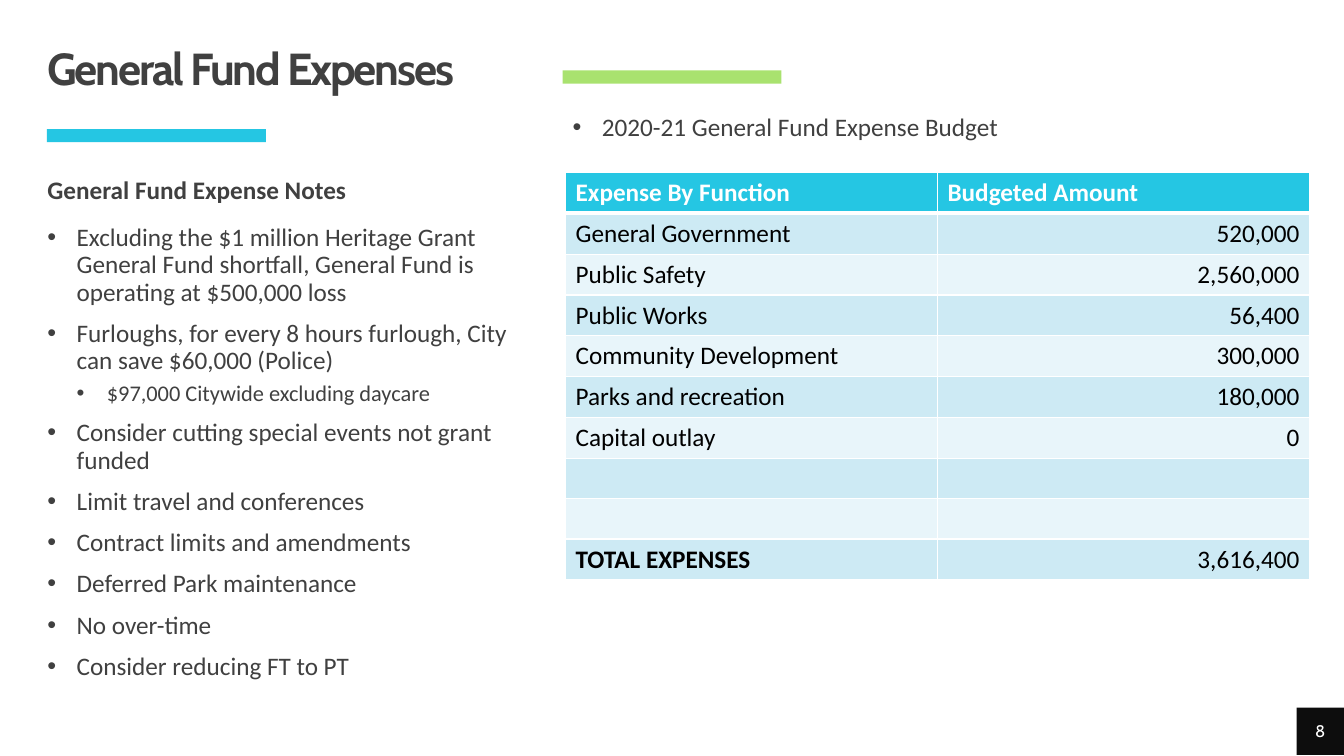
from pptx import Presentation
from pptx.dml.color import RGBColor
from pptx.enum.shapes import MSO_SHAPE
from pptx.enum.text import MSO_ANCHOR, MSO_AUTO_SIZE, PP_ALIGN
from pptx.oxml.ns import qn
from pptx.util import Inches, Pt
from lxml import etree

RECT = MSO_SHAPE.RECTANGLE
TOP, MIDDLE = MSO_ANCHOR.TOP, MSO_ANCHOR.MIDDLE
LEFT, CENTER, RIGHT = PP_ALIGN.LEFT, PP_ALIGN.CENTER, PP_ALIGN.RIGHT
NO_FIT = MSO_AUTO_SIZE.NONE

WIDTH, HEIGHT = Inches(13.33), Inches(7.5)
HEADING_FONT, BODY_FONT = "Cabin", "Calibri"
CYAN = RGBColor(0x25, 0xC6, 0xE3)
GREEN = RGBColor(0xA9, 0xE2, 0x6F)
GRAY = RGBColor(0x40, 0x40, 0x40)
NEAR_BLACK = RGBColor(0x0D, 0x0D, 0x0D)
BLACK = RGBColor(0, 0, 0)
WHITE = RGBColor(0xFF, 0xFF, 0xFF)
BAND_DARK = RGBColor(0xCD, 0xEA, 0xF4)
BAND_LIGHT = RGBColor(0xE8, 0xF5, 0xFA)

# Columns and rows, in percent of the slide's width and height
MARGIN_X, TEXT_X, RIGHT_X, TABLE_X = 3.5, 2.78, 41.86, 42.08
CONTENT_Y = 22.8
LINE_W, LINE_H = 44.86, 5.2
BAR_W, BAR_H = 16.28, 1.73

# List level: left margin, hanging indent, space before, size
LEVELS = [(0.29, -0.29, 10, 18), (0.59, -0.3, 5, 16)]

NOTES = [
    ("Excluding the $1 million Heritage Grant General Fund shortfall, "
     "General Fund is operating at $500,000 loss", 0),
    ("Furloughs, for every 8 hours furlough, City can save $60,000 (Police)", 0),
    ("$97,000 Citywide excluding daycare", 1),
    ("Consider cutting special events not grant funded", 0),
    ("Limit travel and conferences", 0),
    ("Contract limits and amendments", 0),
    ("Deferred Park maintenance", 0),
    ("No over-time", 0),
    ("Consider reducing FT to PT", 0),
]
EXPENSES = [
    ("Expense By Function", "Budgeted Amount"),
    ("General Government", "520,000"),
    ("Public Safety", "2,560,000"),
    ("Public Works", "56,400"),
    ("Community Development", "300,000"),
    ("Parks and recreation", "180,000"),
    ("Capital outlay", "0"),
    ("", ""),
    ("", ""),
    ("TOTAL EXPENSES", "3,616,400"),
]


def area(x, y, w, h):
    """Turn percentages of the slide into left, top, width and height."""
    return (int(WIDTH * x / 100), int(HEIGHT * y / 100),
            int(WIDTH * w / 100), int(HEIGHT * h / 100))


def write(p, text, size=18, color=GRAY, font=BODY_FONT, bold=False,
          align=LEFT, spacing=None):
    p.alignment = align
    r = p.add_run()
    r.text = text
    r.font.size, r.font.name, r.font.bold = Pt(size), font, bold
    r.font.color.rgb = color
    if spacing is not None:
        r.font._element.set("spc", str(int(spacing * 100)))


def place(sp, box, anchor=TOP, inset=None):
    sp.left, sp.top, sp.width, sp.height = area(*box)
    tf = sp.text_frame
    tf.word_wrap, tf.auto_size, tf.vertical_anchor = True, NO_FIT, anchor
    if inset is not None:
        tf.margin_left = tf.margin_right = Inches(inset)
        tf.margin_top = tf.margin_bottom = Inches(inset)
    return tf


def format_paragraph(p, level=0, bullet=True):
    margin, indent, before, size = LEVELS[level]
    p.level = level
    p.line_spacing, p.space_before, p.space_after = 0.9, Pt(before), Pt(0)
    pPr = p._p.get_or_add_pPr()
    pPr.set("marL", str(Inches(margin) if bullet else 0))
    pPr.set("indent", str(Inches(indent) if bullet else 0))
    if bullet:
        etree.SubElement(pPr, qn("a:buFont"), typeface="Arial")
        etree.SubElement(pPr, qn("a:buChar"), char="•")
    else:
        etree.SubElement(pPr, qn("a:buNone"))
    return size


def fill_list(sp, box, items, bullet=True, bold=False):
    tf = place(sp, box)
    for i, (text, level) in enumerate(items):
        p = tf.add_paragraph() if i else tf.paragraphs[0]
        size = format_paragraph(p, level, bullet)
        write(p, text, size=size, bold=bold)


def add_block(s, box, color):
    sp = s.shapes.add_shape(RECT, *area(*box))
    sp.shadow.inherit = False
    sp.fill.solid()
    sp.fill.fore_color.rgb = color
    sp.line.fill.background()
    return sp


def add_borders(cell, bottom):
    tcPr = cell._tc.get_or_add_tcPr()
    for i, side in enumerate(("lnL", "lnR", "lnT", "lnB")):
        width = Pt(bottom if side == "lnB" else 1)
        ln = etree.Element(qn("a:" + side), w=str(width))
        fill = etree.SubElement(ln, qn("a:solidFill"))
        etree.SubElement(fill, qn("a:srgbClr"), val=str(WHITE))
        tcPr.insert(i, ln)


def add_expense_table(s, box, rows):
    table = s.shapes.add_table(len(rows), 2, *area(*box)).table
    for i, row in enumerate(rows):
        header = i == 0
        band = CYAN if header else BAND_DARK if i % 2 else BAND_LIGHT
        for j, text in enumerate(row):
            cell = table.cell(i, j)
            cell.fill.solid()
            cell.fill.fore_color.rgb = band
            add_borders(cell, bottom=3 if header else 1)
            write(cell.text_frame.paragraphs[0], text,
                  color=WHITE if header else BLACK,
                  bold=header or text.startswith("TOTAL"),
                  align=RIGHT if j and not header else LEFT)


def main():
    prs = Presentation()
    prs.slide_width, prs.slide_height = WIDTH, HEIGHT
    s = prs.slides.add_slide(prs.slide_layouts.get_by_name("Comparison"))
    title, heading, notes, caption, spare = s.placeholders
    spare._element.getparent().remove(spare._element)

    # Title
    p = place(title, (MARGIN_X, 6.27, 92.95, 6.27), MIDDLE, 0).paragraphs[0]
    p.line_spacing = 0.9
    write(p, "General Fund Expenses", size=32, font=HEADING_FONT, bold=True,
          spacing=-1.5)

    # Notes on the left
    add_block(s, (MARGIN_X, 17.07, BAR_W, BAR_H), CYAN)
    fill_list(heading, (TEXT_X, CONTENT_Y, LINE_W, LINE_H),
              [("General Fund Expense Notes", 0)], bullet=False, bold=True)
    fill_list(notes, (TEXT_X, 29.07, 36.08, 57.2), NOTES)

    # Budget on the right
    add_block(s, (RIGHT_X, 9.33, BAR_W, BAR_H), GREEN)
    fill_list(caption, (RIGHT_X, 14.53, LINE_W, LINE_H),
              [("2020-21 General Fund Expense Budget", 0)])
    add_expense_table(s, (TABLE_X, CONTENT_Y, 55.36, 53.33), EXPENSES)

    # Page number
    box = (96.47, 93.6, 3.53, 6.27)
    tf = place(add_block(s, box, NEAR_BLACK), box, MIDDLE, 0)
    write(tf.paragraphs[0], "8", size=12, color=WHITE, font=HEADING_FONT,
          align=CENTER)

    prs.save("out.pptx")


if __name__ == "__main__":
    main()
